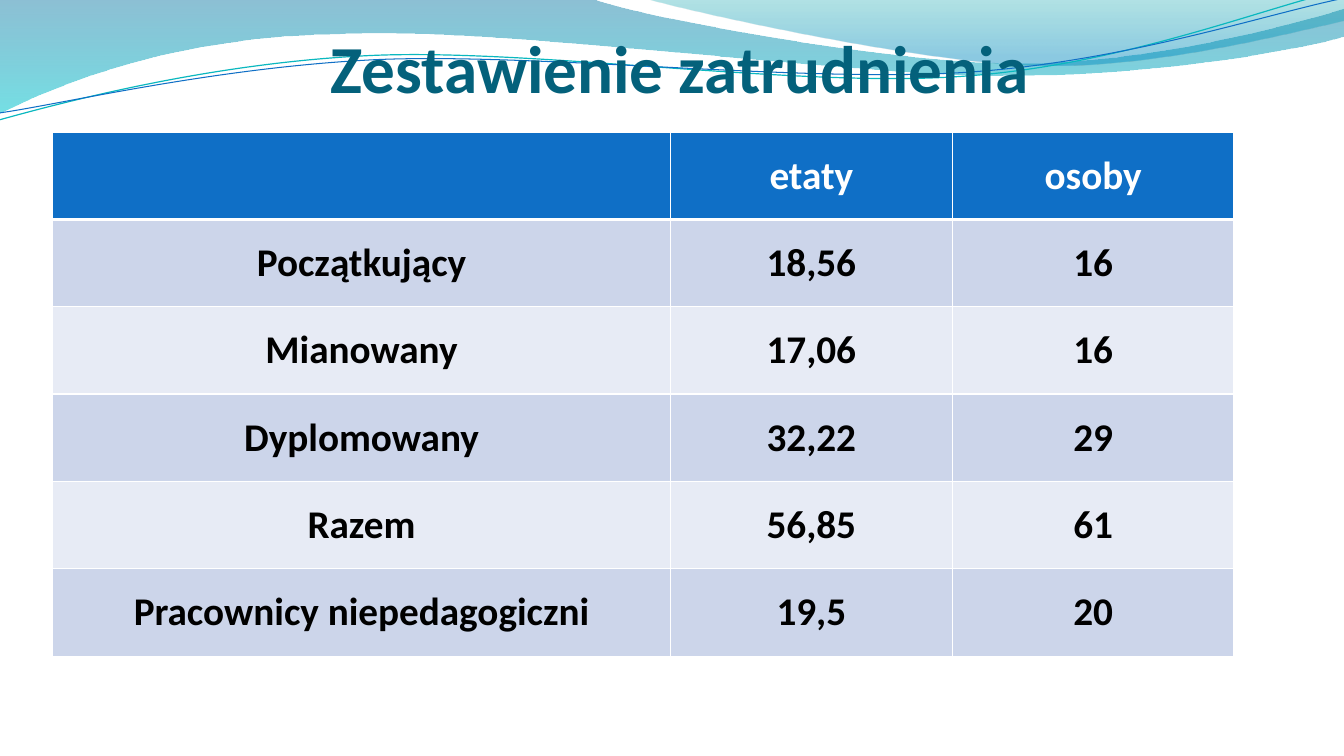
import pptx
import pptx.dml.color
import pptx.enum.text
import pptx.oxml
import pptx.oxml.ns
import pptx.util

Inches = pptx.util.Inches
Pt = pptx.util.Pt
qn = pptx.oxml.ns.qn
NS = pptx.oxml.ns.nsdecls("a")
CENTER = pptx.enum.text.PP_ALIGN.CENTER

COLORS = {
    "title": "04617B", "white": "FFFFFF", "text": "000000",
    "header": "0F6FC6", "odd": "CCD5EA", "even": "E7EBF5",
    "teal_line": "0AB8BF", "blue_line": "0F6FC6",
    "deep": "0074A1", "cyan": "00C6CF", "teal": "00A1A9", "sky": "008BBF",
}

# Each wave is a start point, then lines (2 numbers) or cubic curves (6 numbers)
WIDE_WAVE = [
    (0, 0), (5.87, -0.01), (6.34, 0.17, 8.85, 0.63, 10.11, 0.63),
    (11.38, 0.63, 12.78, 0.26, 13.33, 0.09), (13.35, 0.36),
    (13.11, 0.44, 11.6, 0.76, 9.94, 0.75), (8.29, 0.75, 5.09, 0.28, 3.43, 0.34),
    (1.72, 0.36, 0.61, 0.83, -0.01, 1.13), (0, 0),
]
RIGHT_WAVE = [
    (6.39, -0.01), (6.79, 0.11, 9.09, 0.62, 10.25, 0.65),
    (11.41, 0.69, 12.82, 0.32, 13.33, 0.21), (13.33, 0), (6.39, -0.01),
]
TEAL_CURVE = [
    (-0.01, 1.19), (0.64, 1.01, 2.11, 0.62, 3.69, 0.55),
    (5.27, 0.48, 7.9, 0.87, 9.5, 0.76), (11.1, 0.66, 12.52, 0.08, 13.31, -0.1),
]
BLUE_CURVE = [
    (0, 1.12), (0.63, 1.03, 2.18, 0.66, 3.78, 0.59),
    (5.37, 0.53, 7.96, 0.82, 9.55, 0.72), (11.15, 0.62, 12.55, 0.14, 13.34, -0.02),
]

STAFF = [
    ("", "etaty", "osoby"),
    ("Początkujący", "18,56", "16"),
    ("Mianowany", "17,06", "16"),
    ("Dyplomowany", "32,22", "29"),
    ("Razem", "56,85", "61"),
    ("Pracownicy niepedagogiczni", "19,5", "20"),
]


def rgb(name):
    return pptx.dml.color.RGBColor.from_string(COLORS[name])


class SlideBuilder:
    font = "Calibri"

    def __init__(self, prs):
        self.slide = prs.slides.add_slide(prs.slide_layouts[5])

    def style(self, p, size, color):
        p.alignment = CENTER
        p.font.name = self.font
        p.font.size = Pt(size)
        p.font.bold = True
        p.font.color.rgb = rgb(color)

    def outline(self, path, close):
        points = [(Inches(step[i]), Inches(step[i + 1]))
                  for step in path for i in range(0, len(step), 2)]
        builder = self.slide.shapes.build_freeform(*points[0])
        builder.add_line_segments(points[1:], close=close)
        sp = builder.convert_to_shape()
        sp.shadow.inherit = False
        # Join each three segments of a curve into one cubic curve
        segments = iter(sp._element.spPr.findall(".//" + qn("a:lnTo")))
        for step in path[1:]:
            group = [next(segments) for _ in range(len(step) // 2)]
            if len(group) == 3:
                cubic = pptx.oxml.parse_xml(f"<a:cubicBezTo {NS}/>")
                group[0].addprevious(cubic)
                for segment in group:
                    cubic.append(segment[0])
                    segment.getparent().remove(segment)
        return sp

    def wave(self, path, stops):
        sp = self.outline(path, True)
        sp.line.fill.background()
        sp.fill.gradient()
        sp.fill.gradient_angle = 270
        for stop, (position, color, opacity) in zip(sp.fill.gradient_stops, stops):
            stop.position = position
            stop.color.rgb = rgb(color)
        # Opacity of each gradient stop
        clrs = sp._element.spPr.findall(".//" + qn("a:srgbClr"))
        for clr, (position, color, opacity) in zip(clrs, stops):
            clr.append(pptx.oxml.parse_xml(f'<a:alpha {NS} val="{opacity * 1000}"/>'))

    def curve(self, path, color, width):
        sp = self.outline(path, False)
        sp.fill.background()
        sp.line.color.rgb = rgb(color)
        sp.line.width = Pt(width)

    def title(self, text, left, top, width, height):
        sp = self.slide.shapes.title
        sp.left, sp.top = Inches(left), Inches(top)
        sp.width, sp.height = Inches(width), Inches(height)
        # Bring the title in front of the waves
        self.slide.shapes._spTree.append(sp._element)
        tf = sp.text_frame
        tf.text = text
        tf.auto_size = pptx.enum.text.MSO_AUTO_SIZE.NONE
        tf.vertical_anchor = pptx.enum.text.MSO_ANCHOR.BOTTOM
        tf.margin_left = tf.margin_right = tf.margin_bottom = 0
        tf.margin_top = Inches(0.05)
        self.style(tf.paragraphs[0], 48, "title")

    def borders(self, cell, **widths):
        tcPr = cell._tc.get_or_add_tcPr()
        for side in "LRTB":
            width = Pt(widths.get(side, 1))
            tcPr.append(pptx.oxml.parse_xml(
                f'<a:ln{side} {NS} w="{width}"><a:solidFill>'
                f'<a:srgbClr val="{COLORS["white"]}"/></a:solidFill></a:ln{side}>'))

    def table(self, rows, left, top, width, height, first_width):
        table = self.slide.shapes.add_table(
            len(rows), len(rows[0]), Inches(left), Inches(top),
            Inches(width), Inches(height)).table
        other_width = (width - first_width) / (len(rows[0]) - 1)
        for j, column in enumerate(table.columns):
            column.width = Inches(other_width if j else first_width)
        for i, row in enumerate(rows):
            fill = "header" if i == 0 else "odd" if i % 2 else "even"
            for j, text in enumerate(row):
                cell = table.cell(i, j)
                cell.text = text
                cell.vertical_anchor = pptx.enum.text.MSO_ANCHOR.MIDDLE
                # A thick rule separates the header from the body
                self.borders(cell, T=3 if i == 1 else 1, B=1 if i else 3)
                cell.fill.solid()
                cell.fill.fore_color.rgb = rgb(fill)
                self.style(cell.text_frame.paragraphs[0], 28, "text" if i else "white")


def main():
    prs = pptx.Presentation()
    prs.slide_width, prs.slide_height = Inches(13.33), Inches(7.5)
    s = SlideBuilder(prs)

    # Waves along the top
    s.wave(WIDE_WAVE, [(0, "deep", 45), (1, "cyan", 55)])
    s.wave(RIGHT_WAVE, [(0, "teal", 30), (0.8, "sky", 45)])
    s.curve(TEAL_CURVE, "teal_line", 0.85)
    s.curve(BLUE_CURVE, "blue_line", 0.75)

    # Title and staffing table
    s.title("Zestawienie zatrudnienia", 0.69, 0.21, 12.11, 0.85)
    s.table(STAFF, 0.52, 1.31, 11.72, 5.2, 6.13)

    prs.save("out.pptx")


if __name__ == "__main__":
    main()
